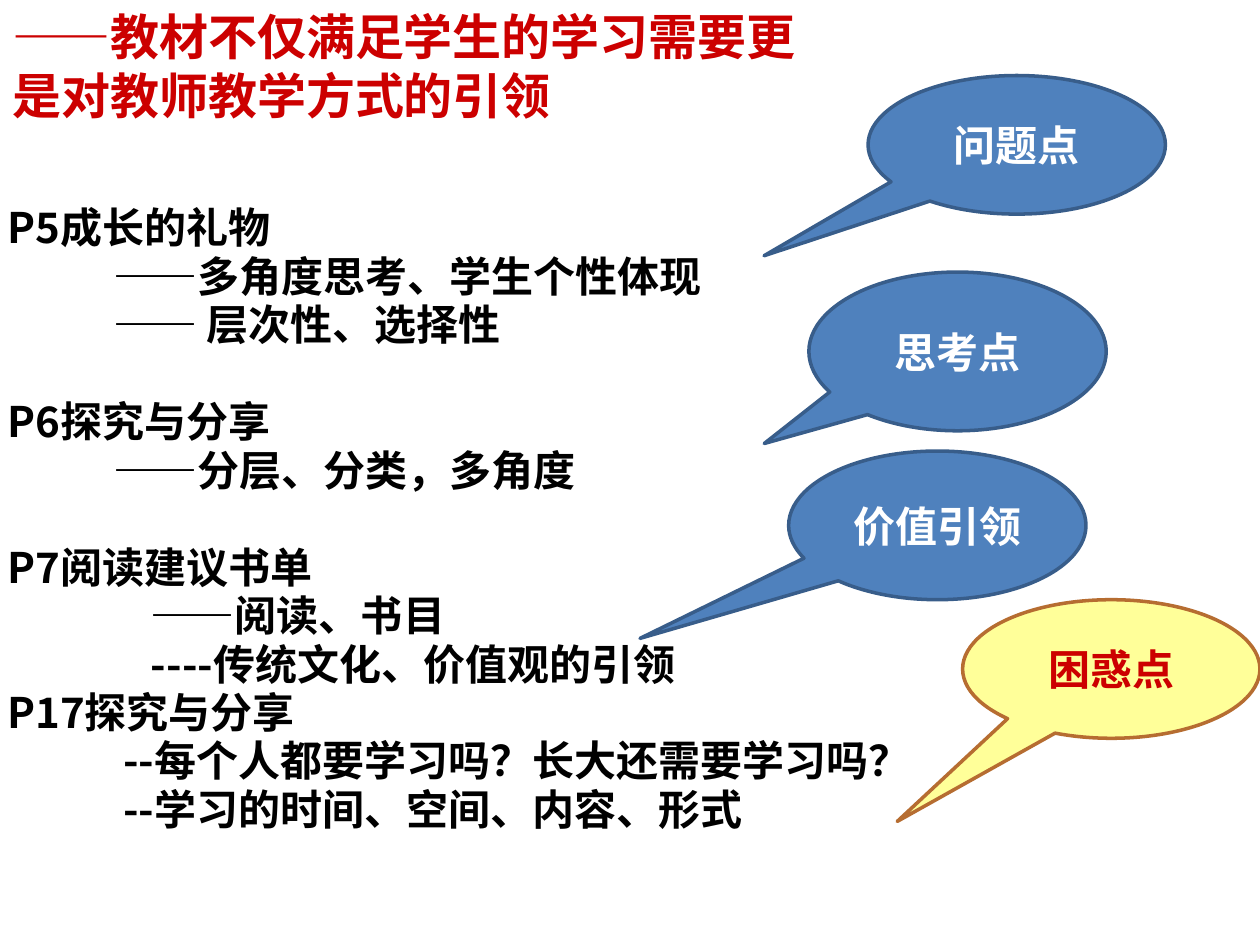
from lxml import etree
from pptx import Presentation
from pptx.dml.color import RGBColor
from pptx.enum.shapes import MSO_SHAPE
from pptx.enum.text import MSO_ANCHOR, MSO_AUTO_SIZE, PP_ALIGN
from pptx.oxml.ns import qn
from pptx.util import Inches, Pt

LEFT, CENTER = PP_ALIGN.LEFT, PP_ALIGN.CENTER
TOP, MIDDLE = MSO_ANCHOR.TOP, MSO_ANCHOR.MIDDLE
CALLOUT = MSO_SHAPE.OVAL_CALLOUT
NOFIT = MSO_AUTO_SIZE.NONE

# Content
TITLE = "——教材不仅满足学生的学习需要更是对教师教学方式的引领"

# Each group: gap above in lines, heading, indent in inches and points
GROUPS = [
    (0, "P5成长的礼物", 0.84, ["——多角度思考、学生个性体现", "—— 层次性、选择性"]),
    (1, "P6探究与分享", 0.84, ["——分层、分类，多角度"]),
    (1, "P7阅读建议书单", 1.14, ["——阅读、书目", "----传统文化、价值观的引领"]),
    (0, "P17探究与分享", 0.92,
     ["--每个人都要学习吗？长大还需要学习吗？", "--学习的时间、空间、内容、形式"]),
]

BLUE = ("4F81BD", "385D8A", "FFFFFF")
YELLOW = ("FFFF99", "B66D31", "CC0000")

# Label, left, top, height, pointer tip, (fill, line, text)
BUBBLES = [
    ("价值引领", 6.26, 3.58, 1.18, (-1.0, 0.76), BLUE),
    ("思考点", 6.42, 2.16, 1.26, (-0.65, 0.58), BLUE),
    ("问题点", 6.89, 0.6, 1.1, (-0.85, 0.8), BLUE),
    ("困惑点", 7.64, 4.76, 1.1, (-0.72, 1.1), YELLOW),
]
WIDE = 2.36
LEAD = 4.6    # points above each body line
PITCH = 27.9  # points from one body line to the next

TITLE_FONT = dict(name="Noto Sans CJK SC", size=Pt(28), bold=True)
BODY_FONT = dict(name="Noto Sans CJK JP", size=Pt(24), bold=True)
BUBBLE_FONT = dict(name="Calibri", size=Pt(24), bold=True)


def color(code):
    return RGBColor.from_string(code)


def write(para, text, form, code, east=None):
    run = para.add_run()
    run.text = text
    for key, value in form.items():
        setattr(run.font, key, value)
    run.font.color.rgb = color(code)
    if east:
        props = run._r.get_or_add_rPr()
        etree.SubElement(props, qn("a:ea")).set("typeface", east)


def place(shape, *box):
    shape.left, shape.top, shape.width, shape.height = map(Inches, box)


def add_title(slide):
    title = slide.shapes.title
    place(title, 0, 0, 6.42, 1.04)
    frame = title.text_frame
    frame.word_wrap, frame.auto_size = True, NOFIT
    frame.vertical_anchor = TOP
    para = frame.paragraphs[0]
    para.alignment = LEFT
    write(para, TITLE, TITLE_FONT, "CC0000", TITLE_FONT["name"])


def add_body(slide):
    box = slide.shapes.add_textbox(*map(Inches, (-0.04, 1.63, 9.5, 4.95)))
    frame = box.text_frame
    frame.word_wrap = True
    rows = []
    for gap, head, indent, points in GROUPS:
        rows.append((head, gap, 0))
        rows += [(point, 0, indent) for point in points]
    for i, (text, gap, indent) in enumerate(rows):
        para = frame.add_paragraph() if i else frame.paragraphs[0]
        para.line_spacing = 0.8
        para.space_before = Pt(LEAD + gap * PITCH if i else 0)
        para._p.get_or_add_pPr().set("marL", str(Inches(indent)))
        write(para, text, BODY_FONT, "000000", BODY_FONT["name"])


def add_bubble(slide, label, left, top, high, tip, colors):
    fill, line, ink = colors
    shape = slide.shapes.add_shape(CALLOUT, *map(Inches, (left, top, WIDE, high)))
    shape.shadow.inherit = False
    shape.adjustments[0], shape.adjustments[1] = tip
    shape.fill.solid()
    shape.fill.fore_color.rgb = color(fill)
    shape.line.color.rgb = color(line)
    shape.line.width = Pt(2)
    frame = shape.text_frame
    frame.vertical_anchor = MIDDLE
    para = frame.paragraphs[0]
    para.alignment = CENTER
    write(para, label, BUBBLE_FONT, ink)


def main():
    deck = Presentation()
    deck.slide_width, deck.slide_height = Inches(10), Inches(7.5)
    slide = deck.slides.add_slide(deck.slide_layouts[5])
    add_title(slide)
    add_body(slide)
    for bubble in BUBBLES:
        add_bubble(slide, *bubble)
    deck.save("out.pptx")


if __name__ == "__main__":
    main()
